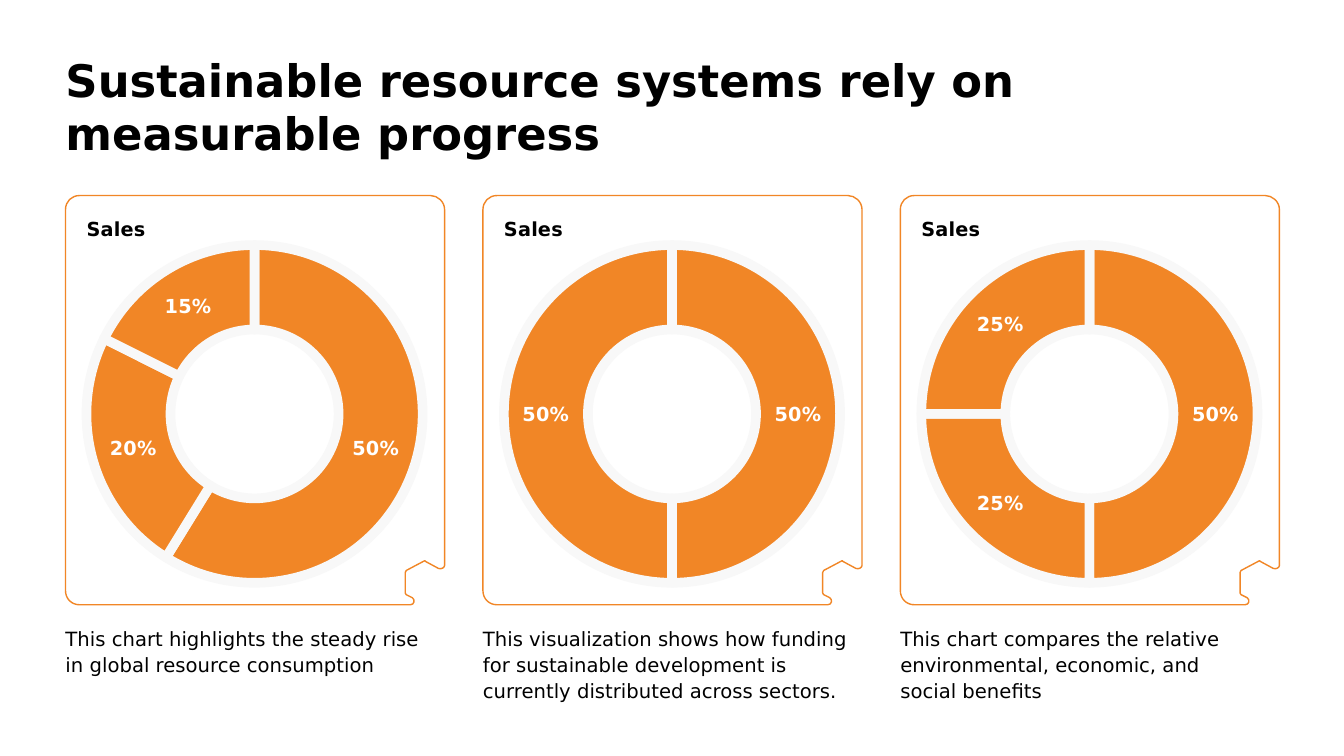
"""Build a slide with three framed doughnut charts and their captions."""
import pptx
import pptx.chart.data
import pptx.dml.color
import pptx.enum.chart
import pptx.enum.text
import pptx.oxml
import pptx.oxml.ns
import pptx.util

Inches = pptx.util.Inches
Pt = pptx.util.Pt
RGBColor = pptx.dml.color.RGBColor
qn = pptx.oxml.ns.qn

ORANGE = RGBColor(0xF1, 0x86, 0x26)
PALE = RGBColor(0xF8, 0xF8, 0xF8)
BLACK = RGBColor(0, 0, 0)
WHITE = RGBColor(255, 255, 255)
FONT = "DejaVu Sans"
TOP = 1.94
LEFT = 0.65
PITCH = 4.14

START = (362, 0)
EDGE = [
    [(14, 0)],
    [(6, 0), (0, 6), (0, 14)],
    [(0, 392)],
    [(0, 400), (6, 406), (14, 406)],
    [(342, 406)],
    [(346, 406), (347, 401), (344, 399)],
    [(338, 396)],
    [(337, 395), (337, 394), (337, 394)],
    [(337, 374)],
    [(337, 373), (337, 373), (338, 372)],
    [(355, 363)],
    [(356, 362), (357, 362), (357, 363)],
    [(370, 370)],
    [(373, 371), (376, 369), (376, 367)],
    [(376, 14)],
    [(376, 6), (369, 0), START],
]

PANELS = [
    ("Sales", [0.5, 0.2, 0.15], 3.6,
     "This chart highlights the steady rise in global resource consumption"),
    ("Series 1", [0.5, 0.5], 3.76,
     "This visualization shows how funding for sustainable development is "
     "currently distributed across sectors."),
    ("Series 1", [0.5, 0.25, 0.25], 3.43,
     "This chart compares the relative environmental, economic, and "
     "social benefits"),
]


class Deck:
    """Hold the style and the current slide."""

    def __init__(self):
        """Open a deck with one blank slide."""
        self.deck = pptx.Presentation()
        self.deck.slide_width = Inches(13.33)
        self.deck.slide_height = Inches(7.5)
        self.slide = self.deck.slides.add_slide(self.deck.slide_layouts[6])

    def style(self, font, size, color=BLACK, bold=False):
        """Set the face, size, colour and weight of a font."""
        font.name = FONT
        font.size = Pt(size)
        font.bold = bold
        font.color.rgb = color

    def text(self, words, x, y, w, h, size, bold=False, space=None, after=0):
        """Add a wrapped text box."""
        frame = self.slide.shapes.add_textbox(
            Inches(x), Inches(y), Inches(w), Inches(h)).text_frame
        frame.word_wrap = True
        frame.margin_left = frame.margin_right = 0
        frame.margin_top = frame.margin_bottom = 0
        frame.vertical_anchor = pptx.enum.text.MSO_ANCHOR.TOP
        line = frame.paragraphs[0]
        line.line_spacing = space
        line.space_after = Pt(after)
        run = line.add_run()
        run.text = words
        self.style(run.font, size, bold=bold)

    def frame(self, x, y):
        """Add a rounded outline with a notched corner."""
        pen = self.slide.shapes.build_freeform(*START, scale=Inches(0.01))
        pen.add_line_segments([part[-1] for part in EDGE], close=True)
        shape = pen.convert_to_shape(Inches(x), Inches(y))
        lines = list(shape._element.iter(qn("a:lnTo")))
        for line, part in zip(lines, EDGE):
            if len(part) == 3:
                dots = "".join(f'<a:pt x="{h}" y="{v}"/>' for h, v in part)
                curve = pptx.oxml.parse_xml(
                    f'<a:cubicBezTo {pptx.oxml.ns.nsdecls("a")}>'
                    f'{dots}</a:cubicBezTo>')
                line.getparent().replace(line, curve)
        shape.shadow.inherit = False
        shape.fill.background()
        shape.line.color.rgb = ORANGE
        shape.line.width = Pt(1)

    def place(self, node, **spots):
        """Give a chart part a manual layout."""
        inner = "".join(f'<c:{k} val="{v}"/>' for k, v in spots.items())
        layout = pptx.oxml.parse_xml(
            f'<c:layout {pptx.oxml.ns.nsdecls("c")}>'
            f'<c:manualLayout>{inner}</c:manualLayout></c:layout>')
        old = node.find(qn("c:layout"))
        if old is not None:
            node.replace(old, layout)
        else:
            tx = node.find(qn("c:tx"))
            node.insert(0 if tx is None else 1, layout)

    def ring(self, name, vals, x, y, w, h):
        """Add a doughnut chart with a title and percent labels."""
        data = pptx.chart.data.CategoryChartData(number_format="0%")
        data.categories = [str(n + 1) for n in range(len(vals))]
        data.add_series(name, vals)
        chart = self.slide.shapes.add_chart(
            pptx.enum.chart.XL_CHART_TYPE.DOUGHNUT,
            Inches(x), Inches(y), Inches(w), Inches(h), data).chart
        self.style(chart.font, 10)
        chart.has_legend = False
        chart.has_title = True
        run = chart.chart_title.text_frame.paragraphs[0].add_run()
        run.text = "Sales"
        self.style(run.font, 14, bold=True)
        title = chart.chart_title._element
        self.place(title, xMode="edge", yMode="edge", x=0, y=0)
        area = chart._chartSpace.chart.plotArea
        self.place(area, layoutTarget="inner", xMode="edge", yMode="edge",
                   x=0.01, y=0.09, w=0.99, h=0.91)
        plot = chart.plots[0]
        plot.vary_by_categories = False
        plot._element.find(qn("c:holeSize")).set("val", "40")
        row = plot.series[0]
        for part in [row] + [row.points[n] for n in range(len(vals))]:
            part.format.fill.solid()
            part.format.fill.fore_color.rgb = ORANGE
            part.format.line.color.rgb = PALE
            part.format.line.width = Pt(7)
        tags = row.data_labels
        tags.show_value = True
        tags.show_percentage = False
        tags.number_format = "0%"
        tags.number_format_is_linked = False
        self.style(tags.font, 14, WHITE, True)


def main():
    """Draw the slide and save it."""
    deck = Deck()
    deck.text("Sustainable resource systems rely on measurable progress",
              LEFT, 0.52, 12.03, 1.16, 32, bold=True)
    for n, (name, vals, wide, words) in enumerate(PANELS):
        x = LEFT + n * PITCH
        deck.frame(x, TOP)
        deck.ring(name, vals, x + 0.16, 2.1, 3.43, 3.73)
        deck.text(words, x, 6.2, wide, 0.54, 14, space=1.1, after=8)
    deck.deck.save("out.pptx")


if __name__ == "__main__":
    main()
